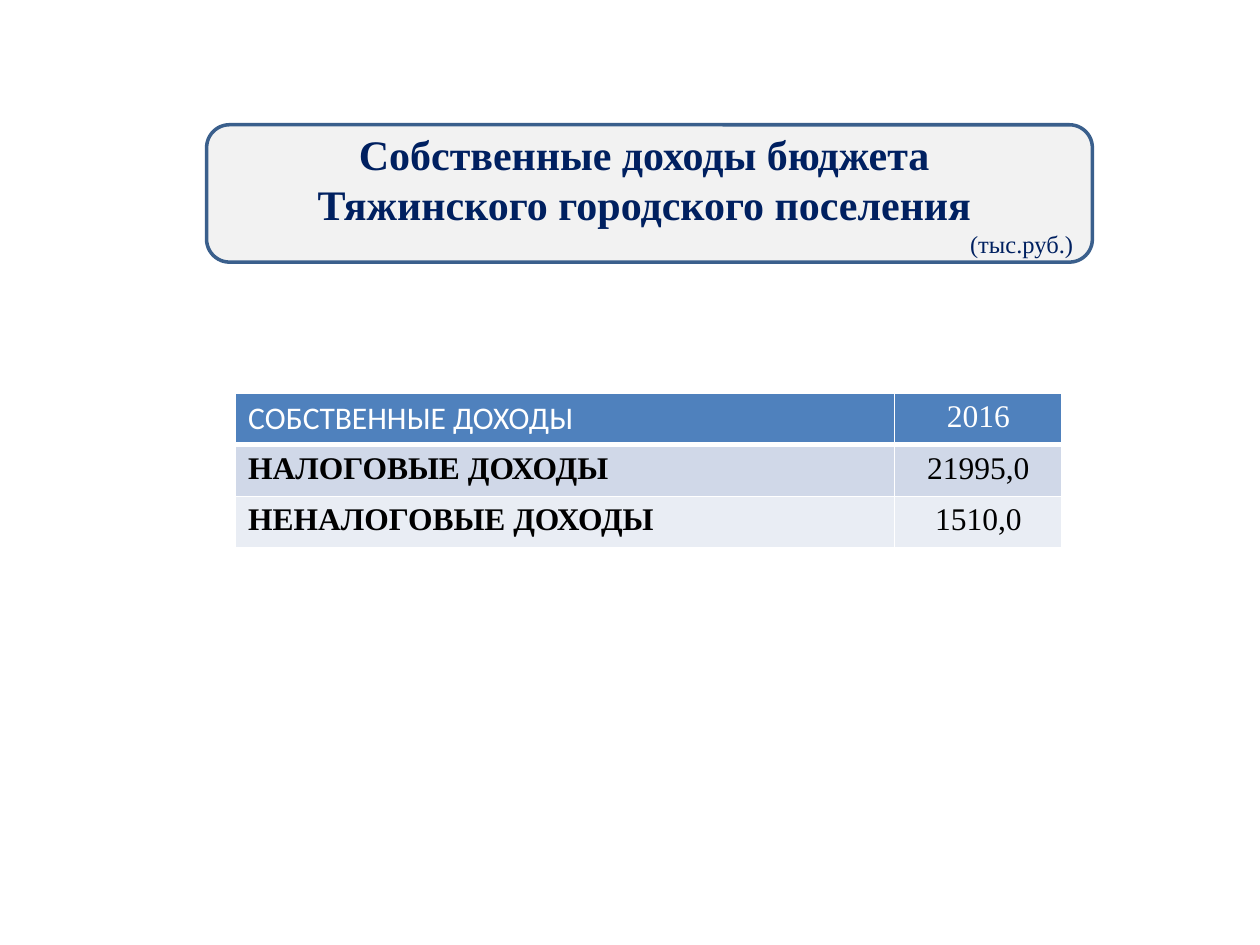
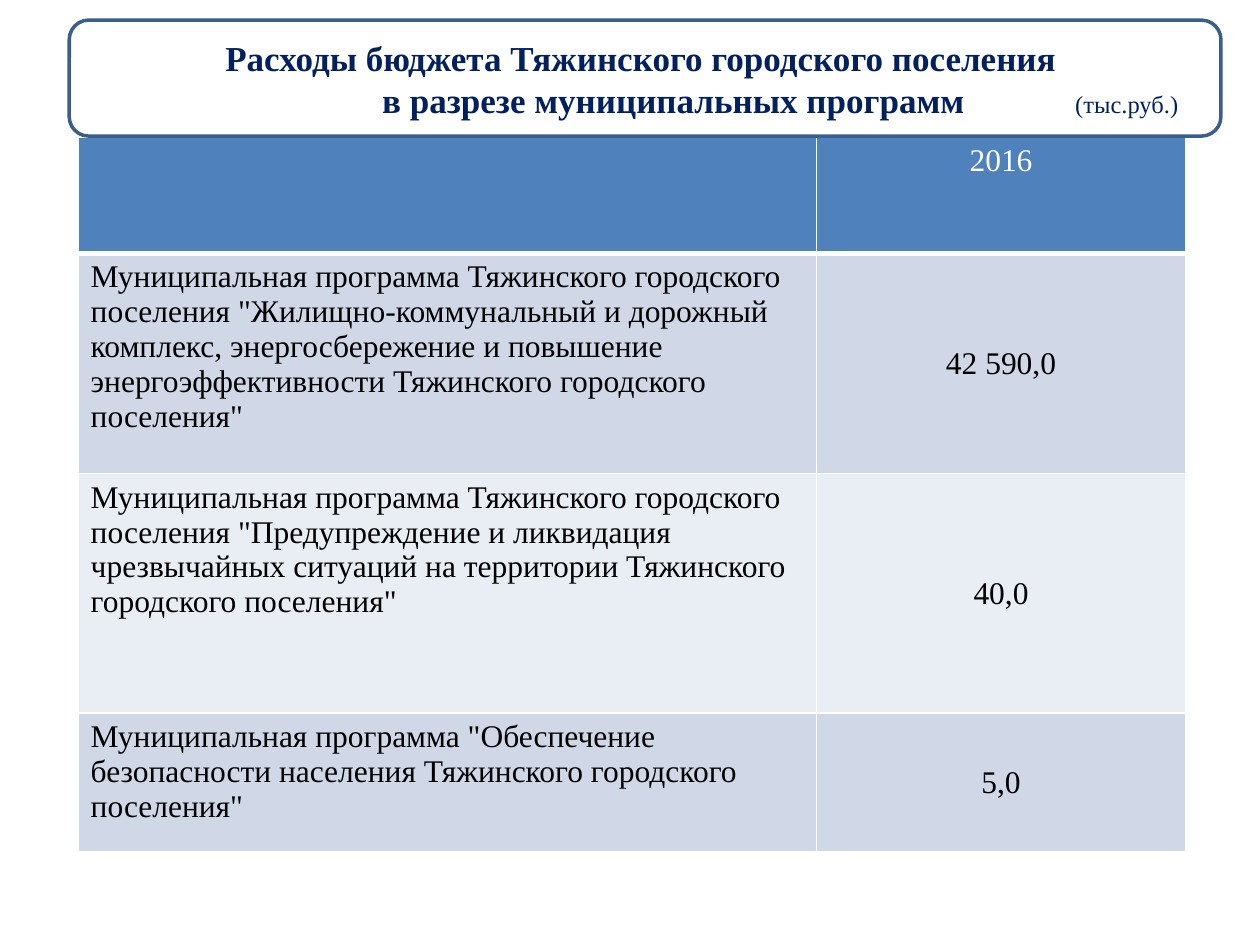
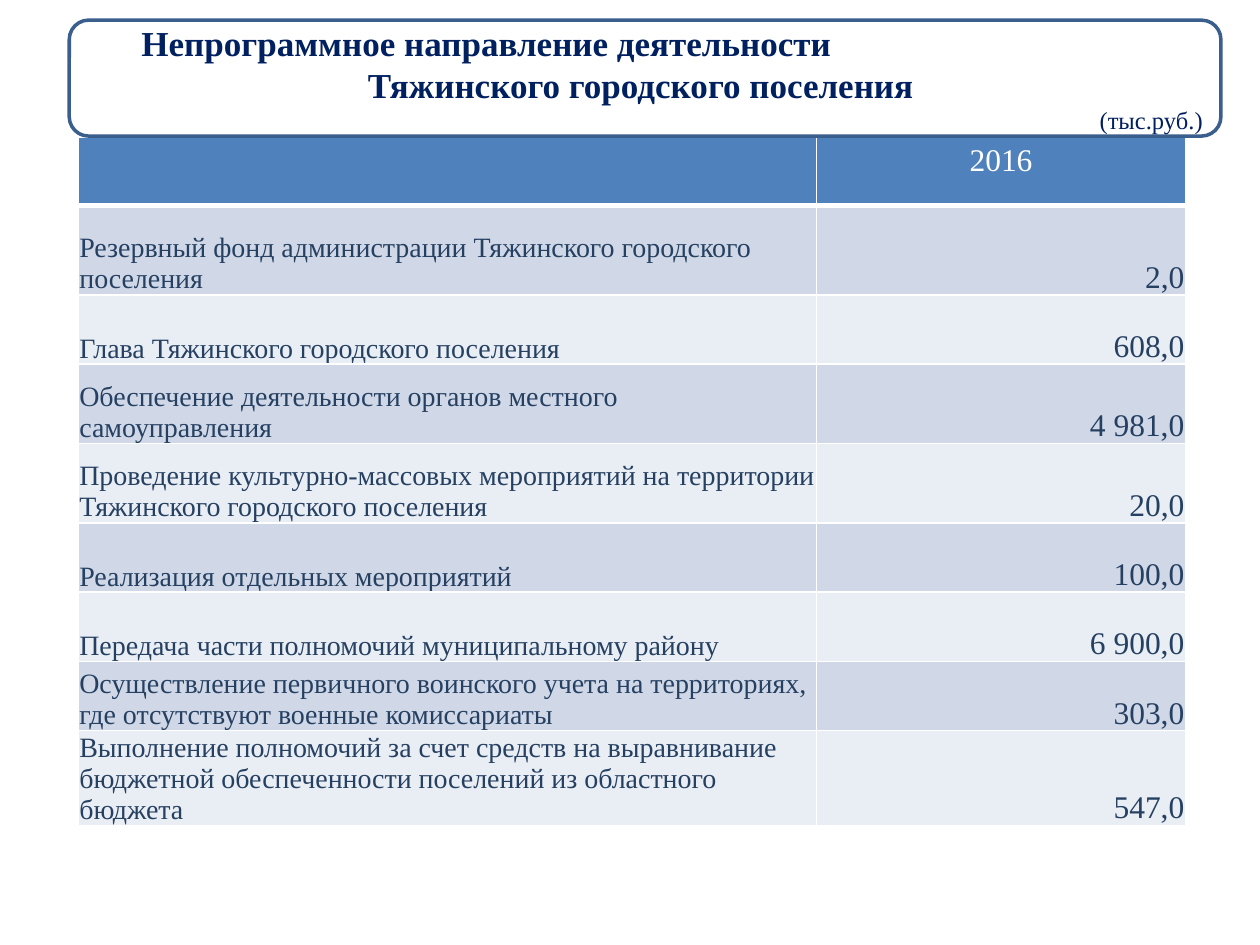
"""Build three budget slides: own income, programme and non-programme spending."""
from dataclasses import dataclass

from lxml import etree
from pptx import Presentation
from pptx.dml.color import RGBColor
from pptx.enum import shapes, text
from pptx.oxml import ns
from pptx.util import Inches, Pt

LEFT, CENTER, RIGHT = text.PP_ALIGN.LEFT, text.PP_ALIGN.CENTER, text.PP_ALIGN.RIGHT
TOP, MIDDLE, BOTTOM = (text.MSO_ANCHOR.TOP, text.MSO_ANCHOR.MIDDLE,
                       text.MSO_ANCHOR.BOTTOM)


@dataclass(frozen=True)
class Theme:
    """Colours, fonts and type sizes shared by the slides."""
    navy: str = "002060"
    outline: str = "3A5F8C"
    white: str = "FFFFFF"
    grey: str = "F2F2F2"
    black: str = "000000"
    slate: str = "254061"
    header: str = "4F81BD"
    bands: tuple = ("D0D8E8", "E9EDF4")
    serif: str = "Times New Roman"
    sans: str = "Calibri"
    title: int = 24
    subtitle: int = 20
    body: int = 18
    label: int = 16
    unit: int = 14


T = Theme()
UNIT = "(тыс.руб.)"
PROGRAM_BOX = (0.55, 0.16, 9.14, 0.92)
PROGRAM_COLS = (5.86, 2.93)


def rgb(value):
    """Return a colour from its hex value."""
    return RGBColor.from_string(value)


def add_text(p, content, size=T.body, color=T.black, bold=False, font=T.serif,
             align=None):
    """Add a formatted run to a paragraph."""
    if align is not None:
        p.alignment = align
    r = p.add_run()
    r.text = content
    r.font.size, r.font.bold, r.font.name = Pt(size), bold, font
    r.font.color.rgb = rgb(color)


def add_tabs(p, stops):
    """Set left tab stops, in inches, on a paragraph."""
    tabs = etree.SubElement(p._p.get_or_add_pPr(), ns.qn("a:tabLst"))
    for stop in stops:
        etree.SubElement(tabs, ns.qn("a:tab"), pos=str(Inches(stop)), algn="l")


def title_box(slide, box, fill):
    """Add the rounded title frame and return its text frame."""
    sp = slide.shapes.add_shape(shapes.MSO_SHAPE.ROUNDED_RECTANGLE,
                                *map(Inches, box))
    sp.shadow.inherit = False
    sp.fill.solid()
    sp.fill.fore_color.rgb = rgb(fill)
    sp.line.color.rgb, sp.line.width = rgb(T.outline), Pt(2)
    tf = sp.text_frame
    tf.word_wrap, tf.vertical_anchor = True, MIDDLE
    return tf


def add_heading(p, content, size=T.subtitle, align=CENTER):
    """Write a bold title line."""
    add_text(p, content, size=size, color=T.navy, bold=True, align=align)


def add_unit(p, content=UNIT, align=None):
    """Write the unit of measure."""
    add_text(p, content, size=T.unit, color=T.navy, align=align)


def style_cell(cell, fill, top=1, bottom=1):
    """Give a cell white borders and a solid fill."""
    tc_pr = cell._tc.get_or_add_tcPr()
    for side, width in (("L", 1), ("R", 1), ("T", top), ("B", bottom)):
        ln = etree.SubElement(tc_pr, ns.qn(f"a:ln{side}"), w=str(Pt(width)))
        paint = etree.SubElement(ln, ns.qn("a:solidFill"))
        etree.SubElement(paint, ns.qn("a:srgbClr"), val=T.white)
    cell.fill.solid()
    cell.fill.fore_color.rgb = rgb(fill)


def budget_table(slide, left, top, cols, heights, rows, heading="", color=T.black,
                 label=None, value=None, anchors=(TOP, TOP), tight=False):
    """Add a two-column table of budget lines for 2016."""
    table = slide.shapes.add_table(
        len(heights), len(cols), Inches(left), Inches(top),
        Inches(sum(cols)), Inches(sum(heights))).table
    for column, width in zip(table.columns, cols):
        column.width = Inches(width)
    for row, height in zip(table.rows, heights):
        row.height = Inches(height)
    head = table.rows[0].cells
    for cell in head:
        style_cell(cell, T.header, bottom=3)
    if heading:
        add_text(head[0].text_frame.paragraphs[0], heading, color=T.white,
                 font=T.sans)
    add_text(head[1].text_frame.paragraphs[0], "2016", color=T.white, align=CENTER)
    formats = (label or {}, {"align": CENTER, **(value or {})})
    for i, row in enumerate(rows):
        for j, content in enumerate(row):
            cell = table.cell(i + 1, j)
            style_cell(cell, T.bands[i % 2])
            cell.vertical_anchor = anchors[j]
            if tight:
                cell.margin_left = cell.margin_right = cell.margin_top = Inches(0.01)
                cell.margin_bottom = 0
            add_text(cell.text_frame.paragraphs[0], content, color=color,
                     **formats[j])


def income_slide(slide):
    """Lay out the own income of the settlement."""
    tf = title_box(slide, (1.64, 0.99, 7.03, 1.09), T.grey)
    add_heading(tf.paragraphs[0], "Собственные доходы бюджета ", size=T.title)
    add_heading(tf.add_paragraph(), "Тяжинского городского поселения ", size=T.title)
    add_unit(tf.add_paragraph(), align=RIGHT)
    rows = [("НАЛОГОВЫЕ ДОХОДЫ", "21995,0"), ("НЕНАЛОГОВЫЕ ДОХОДЫ", "1510,0")]
    budget_table(slide, 1.87, 3.12, (5.23, 1.33), [0.41] * 3, rows,
                 heading="СОБСТВЕННЫЕ ДОХОДЫ", label={"bold": True})


def program_slide(slide):
    """Lay out spending by municipal programme."""
    rows = [
        ('Муниципальная программа Тяжинского городского поселения '
         '"Жилищно-коммунальный и дорожный комплекс, энергосбережение и повышение '
         'энергоэффективности Тяжинского городского поселения"', "42 590,0"),
        ('Муниципальная программа Тяжинского городского поселения '
         '"Предупреждение и ликвидация чрезвычайных ситуаций на территории '
         'Тяжинского городского поселения"', "40,0"),
        ('Муниципальная программа "Обеспечение безопасности населения '
         'Тяжинского городского поселения"', "5,0"),
    ]
    budget_table(slide, 0.62, 1.09, PROGRAM_COLS, (0.92, 1.75, 1.9, 1.1), rows,
                 anchors=(TOP, MIDDLE))
    tf = title_box(slide, PROGRAM_BOX, T.white)
    add_heading(tf.paragraphs[0], "Расходы бюджета Тяжинского городского поселения ")
    p = tf.add_paragraph()
    add_tabs(p, (2.34, 7.84))
    add_heading(p, "\tв разрезе муниципальных программ", align=LEFT)
    add_unit(p, "\t" + UNIT)


def other_slide(slide):
    """Lay out spending outside the programmes."""
    rows = [
        ("Резервный фонд администрации Тяжинского городского поселения", "2,0"),
        ("Глава Тяжинского городского поселения", "608,0"),
        ("Обеспечение деятельности органов местного самоуправления", "4 981,0"),
        ("Проведение культурно-массовых мероприятий на территории "
         "Тяжинского городского поселения", "20,0"),
        ("Реализация отдельных мероприятий", "100,0"),
        ("Передача части полномочий муниципальному району", "6 900,0"),
        ("Осуществление первичного воинского учета на территориях, "
         "где отсутствуют военные комиссариаты", "303,0"),
        ("Выполнение полномочий за счет средств на выравнивание бюджетной "
         "обеспеченности поселений из областного бюджета", "547,0"),
    ]
    heights = (0.54, 0.71, 0.55, 0.63, 0.63, 0.55, 0.55, 0.55, 0.75)
    budget_table(slide, 0.62, 1.09, PROGRAM_COLS, heights, rows, color=T.slate,
                 label={"size": T.label}, value={"align": RIGHT},
                 anchors=(BOTTOM, BOTTOM), tight=True)
    tf = title_box(slide, PROGRAM_BOX, T.white)
    p = tf.paragraphs[0]
    p._p.get_or_add_pPr().set("marL", str(Inches(0.43)))
    add_heading(p, "Непрограммное направление деятельности", align=LEFT)
    add_heading(tf.add_paragraph(), "Тяжинского городского поселения ")
    add_unit(tf.add_paragraph(), align=RIGHT)


def main():
    """Build and save the presentation."""
    prs = Presentation()
    prs.slide_width, prs.slide_height = Inches(10), Inches(7.5)
    for build in (income_slide, program_slide, other_slide):
        build(prs.slides.add_slide(prs.slide_layouts[6]))
    prs.save("out.pptx")


if __name__ == "__main__":
    main()
